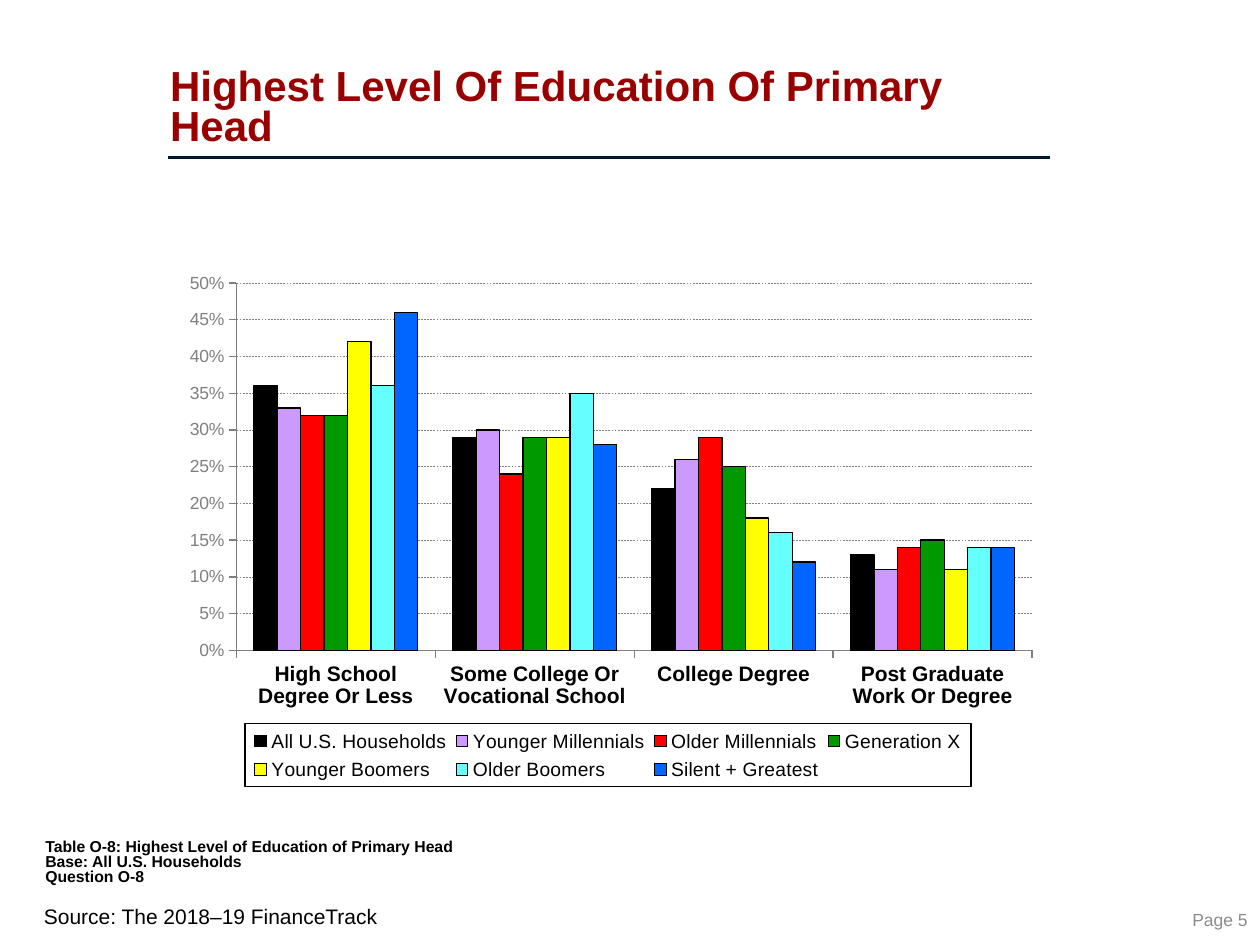
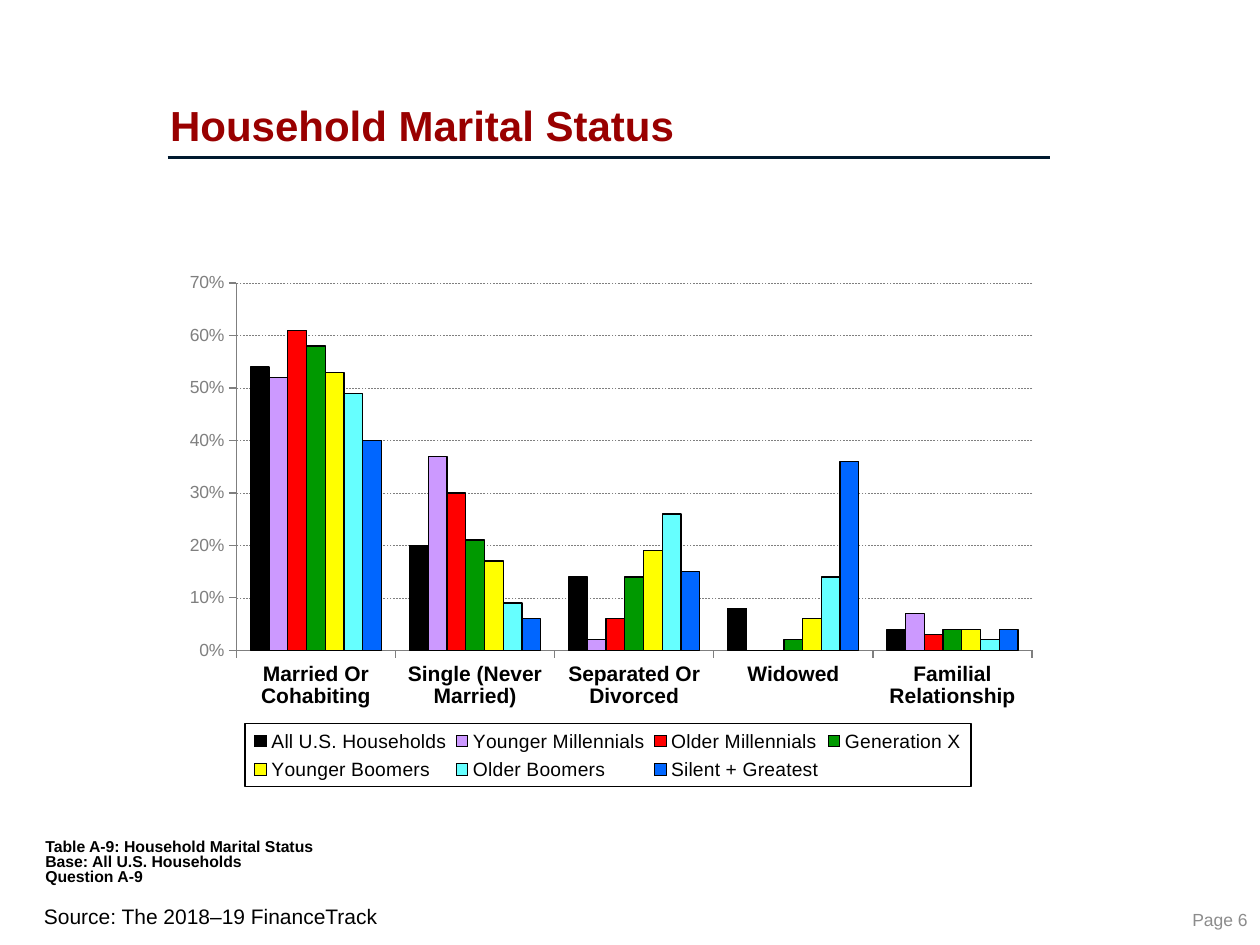
from pptx import Presentation
from pptx.chart.data import CategoryChartData
from pptx.dml.color import RGBColor
from pptx.enum.chart import XL_CHART_TYPE as ChartType, XL_LEGEND_POSITION as LegendPosition
from pptx.enum.chart import XL_TICK_MARK as TickMark
from pptx.enum.dml import MSO_LINE as Dash
from pptx.enum.shapes import MSO_CONNECTOR as Connector
from pptx.enum.text import MSO_ANCHOR as Anchor, PP_ALIGN as Align
from pptx.oxml import parse_xml
from pptx.oxml.ns import nsdecls, qn
from pptx.util import Inches, Pt
from lxml.etree import SubElement

BLACK = RGBColor(0x00, 0x00, 0x00)
NAVY = RGBColor(0x00, 0x19, 0x2F)
DARK_RED = RGBColor(0x99, 0x00, 0x00)
AXIS_GRAY = RGBColor(0x7F, 0x7F, 0x7F)
PAGE_GRAY = RGBColor(0x8C, 0x8C, 0x8C)
LILAC = RGBColor(0xCC, 0x99, 0xFF)
RED = RGBColor(0xFF, 0x00, 0x00)
GREEN = RGBColor(0x00, 0x99, 0x00)
YELLOW = RGBColor(0xFF, 0xFF, 0x00)
CYAN = RGBColor(0x66, 0xFF, 0xFF)
BLUE = RGBColor(0x00, 0x66, 0xFF)

SOURCE = "Source: The 2018–19 FinanceTrack"
FIRST_PAGE = 5
COHORTS = {
    "All U.S. Households": BLACK,
    "Younger Millennials": LILAC,
    "Older Millennials": RED,
    "Generation X": GREEN,
    "Younger Boomers": YELLOW,
    "Older Boomers": CYAN,
    "Silent + Greatest": BLUE,
}
PAGES = [
    {
        "title": "Highest Level Of Education Of Primary Head",
        "note": "Table O-8: Highest Level of Education of Primary Head\n"
                "Base: All U.S. Households\nQuestion O-8",
        "scale": {"minimum_scale": 0, "maximum_scale": 0.5, "major_unit": 0.05},
        "shares": {
            "High School Degree Or Less": (0.36, 0.33, 0.32, 0.32, 0.42, 0.36, 0.46),
            "Some College Or Vocational School": (0.29, 0.30, 0.24, 0.29, 0.29, 0.35, 0.28),
            "College Degree": (0.22, 0.26, 0.29, 0.25, 0.18, 0.16, 0.12),
            "Post Graduate Work Or Degree": (0.13, 0.11, 0.14, 0.15, 0.11, 0.14, 0.14),
        },
    },
    {
        "title": "Household Marital Status",
        "note": "Table A-9: Household Marital Status\n"
                "Base: All U.S. Households\nQuestion A-9",
        "scale": {"minimum_scale": 0, "maximum_scale": 0.7, "major_unit": 0.1},
        "shares": {
            "Married Or Cohabiting": (0.54, 0.52, 0.61, 0.58, 0.53, 0.49, 0.40),
            "Single (Never Married)": (0.20, 0.37, 0.30, 0.21, 0.17, 0.09, 0.06),
            "Separated Or Divorced": (0.14, 0.02, 0.06, 0.14, 0.19, 0.26, 0.15),
            "Widowed": (0.08, 0, 0, 0.02, 0.06, 0.14, 0.36),
            "Familial Relationship": (0.04, 0.07, 0.03, 0.04, 0.04, 0.02, 0.04),
        },
    },
]

TEXT_STYLES = {
    "source": {
        "at": (0.25, 7.12, 8.92, 0.3),
        "frame": {},
        "para": {},
        "font": {"size": 12, "color": BLACK},
    },
    "title": {
        "at": (1.35, 0.53, 7.01, 0.71),
        "frame": {"vertical_anchor": Anchor.BOTTOM, "margin_left": 0, "margin_top": 0,
                  "margin_right": 0, "margin_bottom": Inches(0.05)},
        "para": {"line_spacing": 0.8},
        "font": {"size": 24, "color": DARK_RED, "bold": True},
    },
    "note": {
        "at": (0.32, 6.6, 8.7, 0.5),
        "frame": {"vertical_anchor": Anchor.MIDDLE, "margin_left": Inches(0.04),
                  "margin_top": Inches(0.13), "margin_right": 0,
                  "margin_bottom": Inches(0.13)},
        "para": {"line_spacing": 0.8},
        "font": {"size": 9, "color": BLACK, "bold": True},
    },
    "page": {
        "at": (9.26, 7.16, 0.74, 0.27),
        "frame": {"vertical_anchor": Anchor.MIDDLE},
        "para": {"alignment": Align.RIGHT},
        "font": {"size": 10, "color": PAGE_GRAY},
    },
}
CHART_AT = (1.39, 2.08, 6.94, 4.17)
PLOT_AREA = {"x": 0.07, "y": 0.04, "w": 0.91, "h": 0.7}
LEGEND_AREA = {"x": 0.08, "y": 0.88, "w": 0.83, "h": 0.12}


def set_all(target, values):
    for name, value in values.items():
        setattr(target, name, value)


def set_font(font, size, color, bold=False):
    set_all(font, {"name": "Arial", "size": Pt(size), "bold": bold})
    font.color.rgb = color


def set_line(line, color, width):
    line.color.rgb = color
    line.width = Pt(width)


def add_text(page, style_name, text):
    style = TEXT_STYLES[style_name]
    frame = page.shapes.add_textbox(*map(Inches, style["at"])).text_frame
    set_all(frame, {"word_wrap": True, **style["frame"]})
    para = frame.paragraphs[0]
    para.text = text
    set_all(para, style["para"])
    for span in para.runs:
        set_font(span.font, **style["font"])


def add_title_rule(page):
    ends = map(Inches, (1.33, 1.25, 8.33, 1.25))
    rule = page.shapes.add_connector(Connector.STRAIGHT, *ends)
    set_line(rule.line, NAVY, 2)
    SubElement(rule._element.spPr, qn("a:effectLst"))


def set_layout(parent, position, area, inner=False):
    for old in parent.findall(qn("c:layout")):
        parent.remove(old)
    layout = parent.makeelement(qn("c:layout"))
    parent.insert(position, layout)
    manual = SubElement(layout, qn("c:manualLayout"))
    if inner:
        SubElement(manual, qn("c:layoutTarget")).set("val", "inner")
    for side in "xy":
        SubElement(manual, qn(f"c:{side}Mode")).set("val", "edge")
    for side, share in area.items():
        SubElement(manual, qn(f"c:{side}")).set("val", str(share))


def format_axes(chart, scale):
    values, categories = chart.value_axis, chart.category_axis
    for axis, size, color, bold in ((values, 10, AXIS_GRAY, False),
                                    (categories, 12, BLACK, True)):
        set_all(axis, {"major_tick_mark": TickMark.OUTSIDE,
                       "minor_tick_mark": TickMark.NONE})
        set_font(axis.tick_labels.font, size, color, bold)
        set_line(axis.format.line, AXIS_GRAY, 0.75)
    set_all(values, {"has_major_gridlines": True, **scale})
    set_all(values.tick_labels, {"number_format": "0%", "number_format_is_linked": False})
    grid = values.major_gridlines.format.line
    set_line(grid, AXIS_GRAY, 0.25)
    grid.dash_style = Dash.DASH


def format_legend(chart):
    chart.has_legend = True
    legend = chart.legend
    set_all(legend, {"position": LegendPosition.BOTTOM, "include_in_layout": False})
    set_font(legend.font, 11, BLACK)
    set_layout(legend._element, 1, LEGEND_AREA)
    border = parse_xml(
        f'<c:spPr {nsdecls("c", "a")}><a:ln w="9525"><a:solidFill>'
        f'<a:srgbClr val="{BLACK}"/></a:solidFill></a:ln></c:spPr>')
    legend._element.find(qn("c:txPr")).addprevious(border)


def add_share_chart(page, shares, scale):
    data = CategoryChartData(number_format="0%")
    data.categories = list(shares)
    for cohort, values in zip(COHORTS, zip(*shares.values())):
        data.add_series(cohort, values)
    chart = page.shapes.add_chart(
        ChartType.COLUMN_CLUSTERED, *map(Inches, CHART_AT), data).chart
    chart.has_title = False
    set_font(chart.font, 10, BLACK)
    plot = chart.plots[0]
    set_all(plot, {"gap_width": 150, "overlap": 0, "vary_by_categories": False})
    for series, color in zip(plot.series, COHORTS.values()):
        series.format.fill.solid()
        series.format.fill.fore_color.rgb = color
        set_line(series.format.line, BLACK, 0.75)
    format_axes(chart, scale)
    format_legend(chart)
    set_layout(chart._chartSpace.chart.plotArea, 0, PLOT_AREA, inner=True)


def main():
    deck = Presentation()
    set_all(deck, {"slide_width": Inches(10), "slide_height": Inches(7.5)})
    for number, content in enumerate(PAGES, FIRST_PAGE):
        page = deck.slides.add_slide(deck.slide_layouts[6])
        add_text(page, "source", SOURCE)
        add_title_rule(page)
        add_text(page, "title", content["title"])
        add_share_chart(page, content["shares"], content["scale"])
        add_text(page, "note", content["note"])
        add_text(page, "page", f"Page {number}")
    deck.save("out.pptx")


if __name__ == "__main__":
    main()
